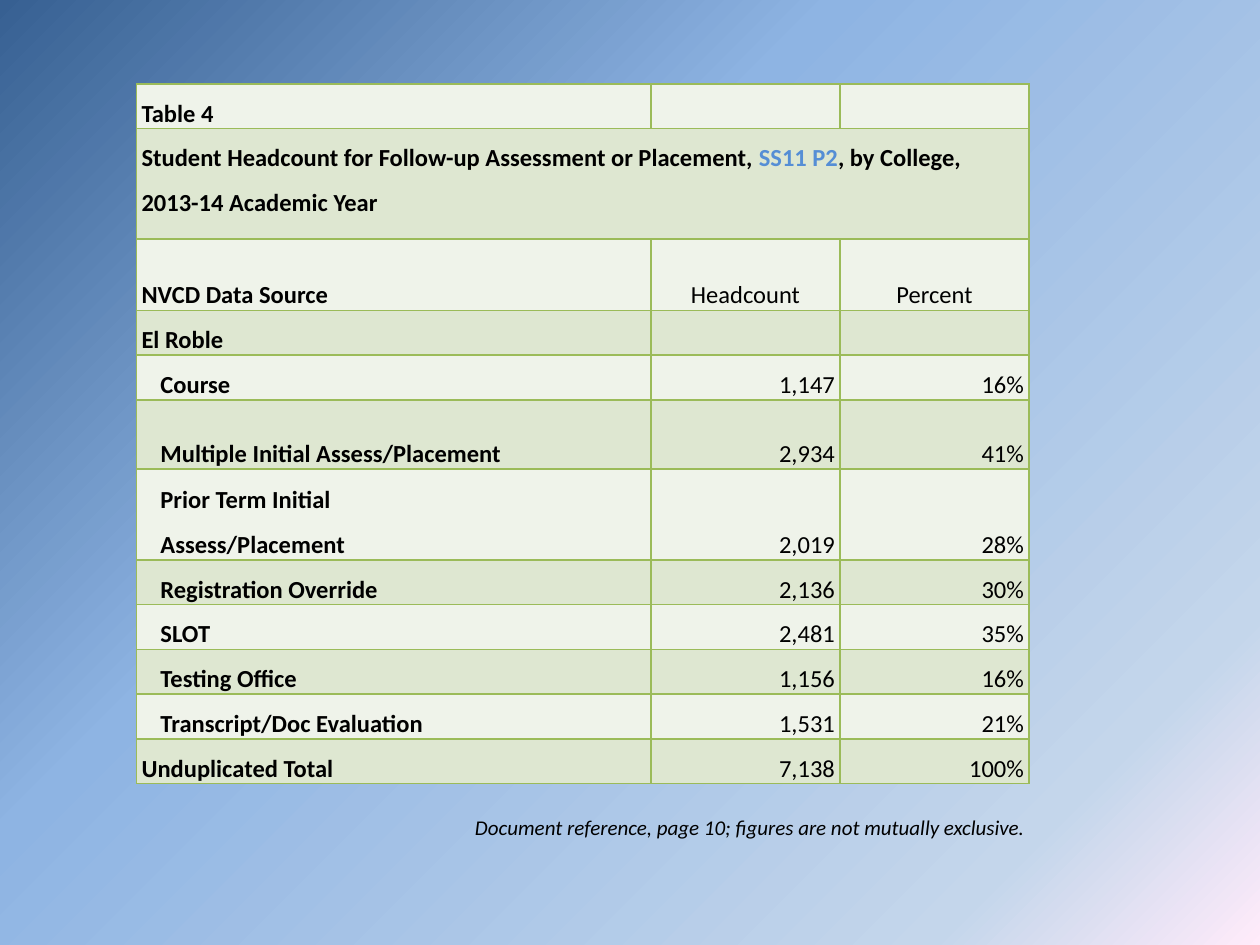
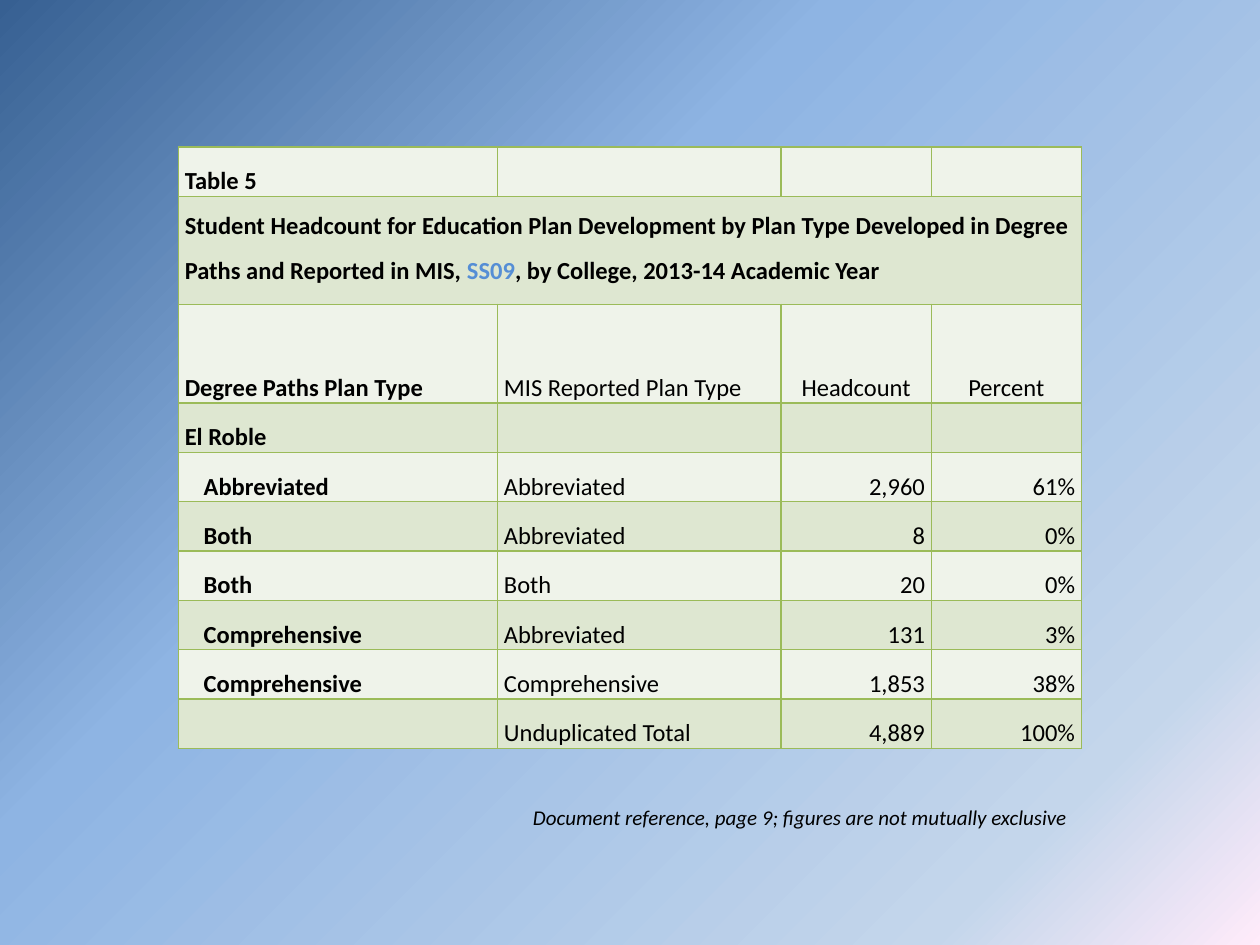
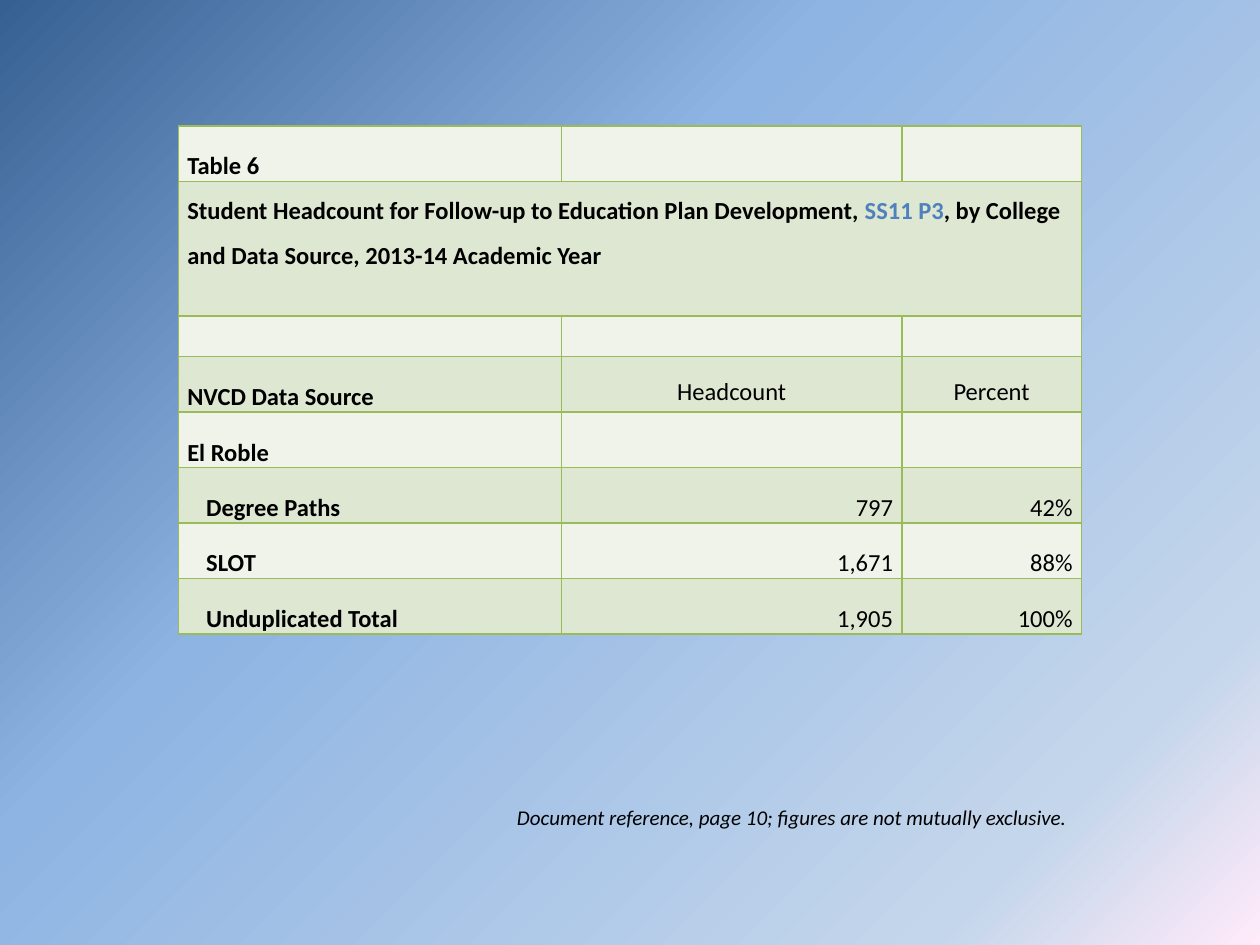
import lxml.etree
import pptx
import pptx.dml.color
import pptx.enum.text
import pptx.oxml.ns
import pptx.util

COLUMNS, ROWS = 120, 90  # grid units across and down the slide
FONT = "Calibri"
TEXT, BORDER = "000000", "9BBB59"
BANDS = ("EFF3EA", "DEE7D1")
GRADIENT = ((0, "376092"), (38, "8EB4E3"), (85, "C4D6EB"), (100, "FFEBFA"))
INDENT_MARK, ACCENT_MARK = ">", "|"
ALIGNMENTS = {"l": pptx.enum.text.PP_ALIGN.LEFT, "c": pptx.enum.text.PP_ALIGN.CENTER,
              "r": pptx.enum.text.PP_ALIGN.RIGHT}
ANCHORS = pptx.enum.text.MSO_ANCHOR


def color(value):
    return pptx.dml.color.RGBColor.from_string(value)


def set_attributes(target, values):
    for name, value in values.items():
        setattr(target, name, value)


def add_element(parent, tag, **attributes):
    return lxml.etree.SubElement(parent, pptx.oxml.ns.qn(tag), attributes)


class Deck:
    """Holds the shared style and the current slide."""

    def __init__(self):
        self.presentation = pptx.Presentation()
        set_attributes(self.presentation, {"slide_width": pptx.util.Inches(10),
                                           "slide_height": pptx.util.Inches(7.5)})
        self.slide = None
        self.add_background()

    def across(self, units):
        return round(self.presentation.slide_width * units / COLUMNS)

    def down(self, units):
        return round(self.presentation.slide_height * units / ROWS)

    def add_background(self):
        master = self.presentation.slide_master
        fill = master.background.fill
        fill.gradient()
        fill.gradient_angle = 315
        stops = next(master.element.iter(pptx.oxml.ns.qn("a:gsLst")))
        stops.clear()
        for position, value in GRADIENT:
            stop = add_element(stops, "a:gs", pos=str(position * 1000))
            add_element(stop, "a:srgbClr", val=value)

    def add_slide(self):
        self.slide = self.presentation.slides.add_slide(self.presentation.slide_layouts[6])

    def add_text(self, frame, text, align, accent=TEXT, spacing=1.0, **font_format):
        """Add one paragraph a line; text between accent marks takes the accent colour."""
        for number, line in enumerate(text.split("\n")):
            paragraph = frame.add_paragraph() if number else frame.paragraphs[0]
            set_attributes(paragraph, {"alignment": ALIGNMENTS[align], "line_spacing": spacing})
            if line.startswith(INDENT_MARK):
                line = line[1:]
                paragraph._p.get_or_add_pPr().set("indent", str(pptx.util.Inches(0.15)))
            for piece, words in enumerate(line.split(ACCENT_MARK)):
                run = paragraph.add_run()
                run.text = words
                set_attributes(run.font, {"name": FONT, **font_format})
                run.font.color.rgb = color(accent if piece % 2 else TEXT)

    def add_borders(self, cell):
        properties = cell._tc.get_or_add_tcPr()
        for side in "LRTB":
            line = add_element(properties, f"a:ln{side}", w=str(pptx.util.Pt(1)))
            solid = add_element(line, "a:solidFill")
            add_element(solid, "a:srgbClr", val=BORDER)

    def add_table(self, left, top, widths, heights, rows, aligns, margin, accent,
                  header_row=2, header_anchor=ANCHORS.BOTTOM):
        table = self.slide.shapes.add_table(
            len(rows), len(widths), self.across(left), self.down(top),
            self.across(sum(widths)), self.down(sum(heights))).table
        set_attributes(table, {"first_row": False, "horz_banding": False})
        for column, width in zip(table.columns, widths):
            column.width = self.across(width)
        for row, height in zip(table.rows, heights):
            row.height = self.down(height)

        inset = pptx.util.Inches(margin)
        for row_number, values in enumerate(rows):
            for column_number, align in enumerate(aligns):
                cell = table.cell(row_number, column_number)
                text = values[column_number] if column_number < len(values) else ""
                is_heading = row_number == header_row and align == "r"
                anchor = header_anchor if is_heading else ANCHORS.BOTTOM
                set_attributes(cell, {
                    "margin_left": inset, "margin_right": inset,
                    "margin_top": 0, "margin_bottom": 0,
                    "vertical_anchor": ANCHORS.TOP if row_number == 1 else anchor})
                self.add_borders(cell)
                cell.fill.solid()
                cell.fill.fore_color.rgb = color(BANDS[row_number % 2])
                if text:
                    self.add_text(cell.text_frame, text, "c" if is_heading else align,
                                  accent, spacing=1.5, size=pptx.util.Pt(14),
                                  bold=column_number == 0)
                else:
                    add_element(cell.text_frame.paragraphs[0]._p, "a:endParaRPr", sz="1400")
        # The title row spans the whole table
        table.cell(1, 0).merge(table.cell(1, len(widths) - 1))

    def add_note(self, left, top, width, text):
        frame = self.slide.shapes.add_textbox(
            self.across(left), self.down(top), self.across(width), self.down(3.6)).text_frame
        set_attributes(frame, {"word_wrap": True,
                               "auto_size": pptx.enum.text.MSO_AUTO_SIZE.SHAPE_TO_FIT_TEXT})
        self.add_text(frame, text, "r", size=pptx.util.Pt(12), italic=True)


def main():
    deck = Deck()

    # Follow-up assessment or placement
    deck.add_slide()
    deck.add_table(
        13, 8, (49, 18, 18), (4.2, 10.5, 6.8, 4.2, 4.2, 6.6, 8.65) + (4.2,) * 5,
        (("Table 4",),
         ("Student Headcount for Follow-up Assessment or Placement, |SS11 P2|, by College,\n"
          "2013-14 Academic Year",),
         ("NVCD Data Source", "Headcount", "Percent"),
         ("El Roble",),
         (">Course", "1,147", "16%"),
         (">Multiple Initial Assess/Placement", "2,934", "41%"),
         (">Prior Term Initial\n>Assess/Placement", "2,019", "28%"),
         (">Registration Override", "2,136", "30%"),
         (">SLOT", "2,481", "35%"),
         (">Testing Office", "1,156", "16%"),
         (">Transcript/Doc Evaluation", "1,531", "21%"),
         ("Unduplicated Total", "7,138", "100%")),
        "lrr", margin=0.04, accent="558ED5")
    deck.add_note(43, 77, 55.8,
                  "Document reference, page 10; figures are not mutually exclusive.")

    # Education plan development by plan type
    deck.add_slide()
    deck.add_table(
        17, 14, (30.4, 27, 14.3, 14.3), (4.7, 10.3, 9.4) + (4.7,) * 7,
        (("Table 5",),
         ("Student Headcount for Education Plan Development by Plan Type Developed in Degree "
          "Paths and Reported in MIS, |SS09|, by College, 2013-14 Academic Year",),
         ("Degree Paths Plan Type", "MIS Reported Plan Type", "Headcount", "Percent"),
         ("El Roble",),
         (">Abbreviated", "Abbreviated", "2,960", "61%"),
         (">Both", "Abbreviated", "8", "0%"),
         (">Both", "Both", "20", "0%"),
         (">Comprehensive", "Abbreviated", "131", "3%"),
         (">Comprehensive", "Comprehensive", "1,853", "38%"),
         ("", "Unduplicated Total", "4,889", "100%")),
        "llrr", margin=0.05, accent="558ED5")
    deck.add_note(40, 76, 62.8,
                  "Document reference, page 9; figures are not mutually exclusive")

    # Follow-up to education plan development
    deck.add_slide()
    deck.add_table(
        17, 12, (36.5, 32.4, 17.1), (5.28, 12.8, 3.9) + (5.28,) * 5,
        (("Table 6",),
         ("Student Headcount for Follow-up to Education Plan Development, |SS11 P3|, by College "
          "and Data Source, 2013-14 Academic Year",),
         (),
         ("NVCD Data Source", "Headcount", "Percent"),
         ("El Roble",),
         (">Degree Paths", "797", "42%"),
         (">SLOT", "1,671", "88%"),
         (">Unduplicated Total", "1,905", "100%")),
        "lrr", margin=0.07, accent="4F81BD", header_row=3, header_anchor=ANCHORS.MIDDLE)
    deck.add_note(40, 76, 62.8,
                  "Document reference, page 10; figures are not mutually exclusive.")

    deck.presentation.save("out.pptx")


if __name__ == "__main__":
    main()
